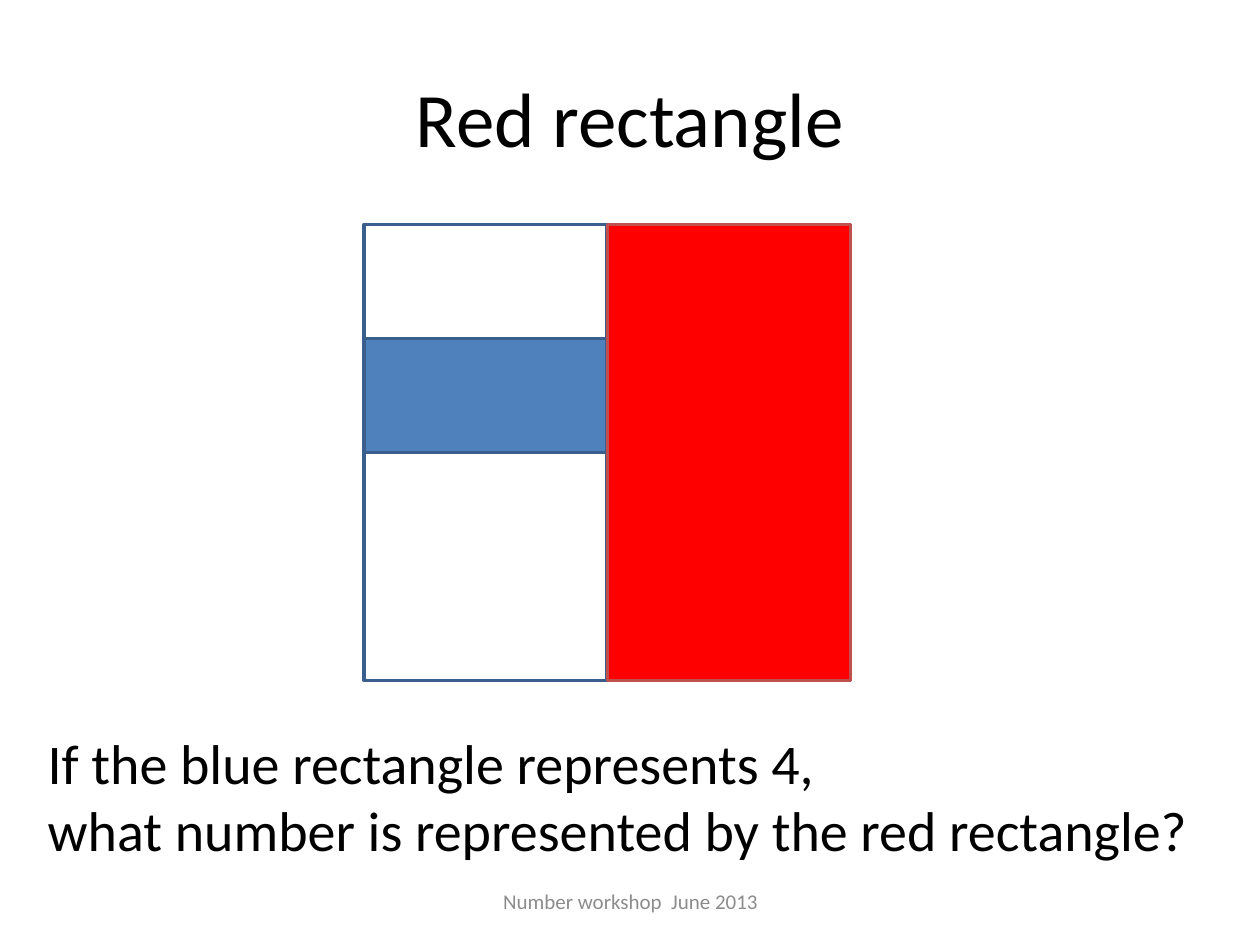
from pptx import Presentation
from pptx.dml.color import RGBColor
from pptx.enum.shapes import MSO_SHAPE
from pptx.enum.text import MSO_ANCHOR, PP_ALIGN
from pptx.util import Inches, Pt

RECTANGLE = MSO_SHAPE.RECTANGLE
TOP, MIDDLE = MSO_ANCHOR.TOP, MSO_ANCHOR.MIDDLE
LEFT, CENTER = PP_ALIGN.LEFT, PP_ALIGN.CENTER

COLORS = {
    "white": "FFFFFF", "blue": "4F81BD", "blue line": "3A5F8C",
    "red": "FF0000", "red line": "C0504D", "black": "000000", "grey": "8C8C8C",
}

# Content: lines, box (left, top, width, height), size, color, align, anchor, wrap
TEXTS = [
    (["If the blue rectangle represents 4,",
      "what number is represented by the red rectangle?"],
     (0.28, 5.73, 9.34, 1.18), 32, "black", LEFT, TOP, False),
    (["Red rectangle"], (0.5, 0.3, 9, 1.25), 44, "black", CENTER, MIDDLE, True),
    (["Number workshop  June 2013"],
     (3.42, 6.95, 3.17, 0.4), 12, "grey", CENTER, MIDDLE, True),
]

# Rectangles in grid cells: column, row, rows tall, fill, line
GRID_LEFT, GRID_TOP, CELL_WIDTH, CELL_HEIGHT = 2.89, 1.78, 1.93, 1.81
RECTANGLES = [(column, row, 1, "white", "blue line")
              for column in range(2) for row in range(2)]
RECTANGLES += [(0, 0.5, 0.5, "blue", "blue line"), (1, 0, 2, "red", "red line")]


def color(name):
    return RGBColor.from_string(COLORS[name])


def add_rectangle(slide, column, row, rows, fill, line):
    shape = slide.shapes.add_shape(
        RECTANGLE,
        Inches(GRID_LEFT + column * CELL_WIDTH), Inches(GRID_TOP + row * CELL_HEIGHT),
        Inches(CELL_WIDTH), Inches(rows * CELL_HEIGHT))
    shape.shadow.inherit = False
    shape.fill.solid()
    shape.fill.fore_color.rgb = color(fill)
    shape.line.color.rgb = color(line)
    shape.line.width = Pt(2)


def add_text(slide, lines, place, size, color_name, align, anchor, wrap):
    box = slide.shapes.add_textbox(*map(Inches, place))
    frame = box.text_frame
    frame.word_wrap = wrap
    frame.vertical_anchor = anchor
    frame.text = "\n".join(lines)
    for para in frame.paragraphs:
        para.alignment = align
        para.font.name = "Calibri"
        para.font.size = Pt(size)
        para.font.color.rgb = color(color_name)


def main():
    deck = Presentation()
    deck.slide_width, deck.slide_height = Inches(10), Inches(7.5)
    slide = deck.slides.add_slide(deck.slide_layouts[6])

    # Divided square
    for rectangle in RECTANGLES:
        add_rectangle(slide, *rectangle)

    # Question, title and footer
    for text in TEXTS:
        add_text(slide, *text)

    deck.save("out.pptx")


if __name__ == "__main__":
    main()
